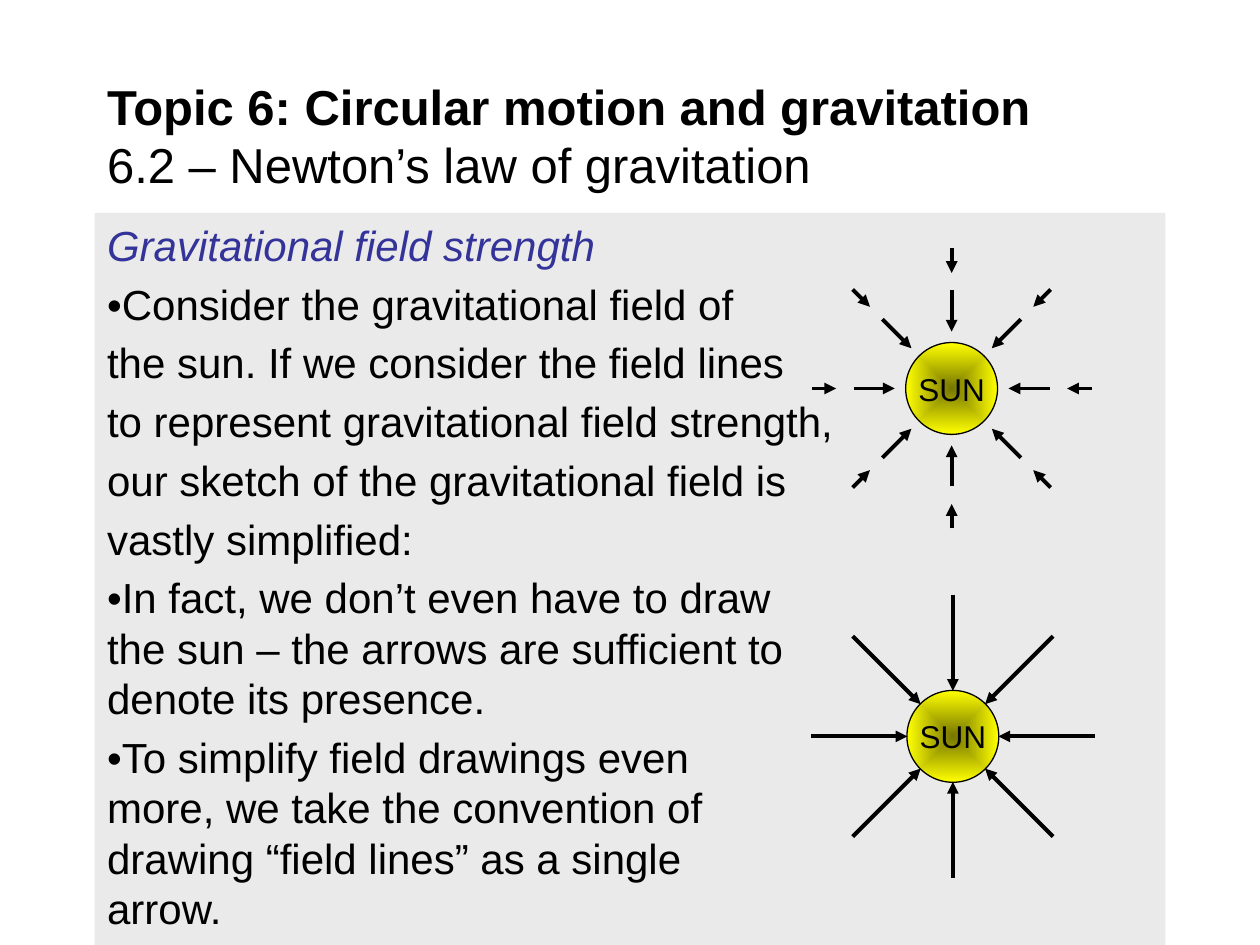
from math import cos, pi, sin

from lxml import etree
from pptx import Presentation
from pptx.dml.color import RGBColor
from pptx.enum.shapes import MSO_CONNECTOR, MSO_SHAPE
from pptx.enum.text import MSO_ANCHOR, MSO_AUTO_SIZE, PP_ALIGN
from pptx.oxml.ns import qn
from pptx.util import Pt

OVAL, STRAIGHT = MSO_SHAPE.OVAL, MSO_CONNECTOR.STRAIGHT
TOP, MIDDLE = MSO_ANCHOR.TOP, MSO_ANCHOR.MIDDLE
LEFT, CENTER = PP_ALIGN.LEFT, PP_ALIGN.CENTER
NO_FIT = MSO_AUTO_SIZE.NONE

BODY = [
    "Gravitational field strength",
    "•Consider the gravitational field of",
    "the sun. If we consider the field lines",
    "to represent gravitational field strength,",
    "our sketch of the gravitational field is",
    "vastly simplified:",
    "•In fact, we don’t even have to draw\vthe sun – the arrows are sufficient to\v"
    "denote its presence.",
    "•To simplify field drawings even\vmore, we take the convention of\v"
    "drawing “field lines” as a single\varrow.",
]
SUN_RADIUS = 26.25
# Each sun: centre x, centre y, rings of arrows as (start radius, end radius)
SUNS = [
    (543.8, 222, [(56, 32.5), (80, 66)]),
    (544.5, 420.8, [(81, 26)]),
]


def color(value):
    return RGBColor.from_string(value)


def style(font, size, value):
    font.name = "Arial"
    font.size = Pt(size)
    font.color.rgb = color(value)


deck = Presentation()
deck.slide_width, deck.slide_height = Pt(720), Pt(540)
page = deck.slides.add_slide(deck.slide_layouts[1])
title, body = page.placeholders

# Title
title.left, title.top, title.width, title.height = Pt(54), Pt(41.8), Pt(612), Pt(70.5)
frame = title.text_frame
frame.auto_size = NO_FIT
frame.vertical_anchor = MIDDLE
para = frame.paragraphs[0]
para.alignment = LEFT
style(para.font, 28, "000000")
topic = para.add_run()
topic.text = "Topic 6: Circular motion and gravitation"
topic.font.bold = True
para.add_line_break()
section = para.add_run()
section.text = "6.2 – Newton’s law of gravitation"

# Grey panel with the body text
body.left, body.top, body.width, body.height = Pt(54), Pt(121.7), Pt(612), Pt(418.3)
body.fill.solid()
body.fill.fore_color.rgb = color("EAEAEA")
frame = body.text_frame
frame.auto_size = NO_FIT
frame.vertical_anchor = TOP
for index, text in enumerate(BODY):
    para = frame.paragraphs[0] if index == 0 else frame.add_paragraph()
    para.text = text
    para.space_before = Pt(4.8)
    style(para.font, 24, "000000" if index else "333399")
    para.font.italic = index == 0
    # The bullet signs are part of the text, so the template's bullets go
    properties = para._p.get_or_add_pPr()
    properties.set("marL", "0")
    properties.set("indent", "0")
    bullet = etree.Element(qn("a:buNone"))
    properties.find(qn("a:spcBef")).addnext(bullet)

for center_x, center_y, rings in SUNS:
    # Sun with a gradient that darkens towards its middle
    sun = page.shapes.add_shape(OVAL, Pt(center_x - SUN_RADIUS), Pt(center_y - SUN_RADIUS),
                                Pt(2 * SUN_RADIUS), Pt(2 * SUN_RADIUS))
    sun.shadow.inherit = False
    sun.line.color.rgb = color("000000")
    sun.line.width = Pt(0.75)
    sun.fill.gradient()
    for stop, position, value in zip(sun.fill.gradient_stops, (0, 1), ("767600", "FFFF00")):
        stop.position = position
        stop.color.rgb = color(value)
    gradient = sun._element.spPr.find(qn("a:gradFill"))
    gradient.remove(gradient.find(qn("a:lin")))
    shading = etree.SubElement(gradient, qn("a:path"), path="shape")
    etree.SubElement(shading, qn("a:fillToRect"), l="50000", t="50000", r="50000", b="50000")

    # Label
    frame = sun.text_frame
    frame.word_wrap = False
    frame.vertical_anchor = MIDDLE
    para = frame.paragraphs[0]
    para.text = "SUN"
    para.alignment = CENTER
    style(para.font, 18, "000000")

    # Eight inward arrows in each ring
    for start, end in rings:
        for step in range(8):
            across, down = cos(step * pi / 4), sin(step * pi / 4)
            arrow = page.shapes.add_connector(
                STRAIGHT,
                Pt(center_x + start * across), Pt(center_y + start * down),
                Pt(center_x + end * across), Pt(center_y + end * down))
            arrow.line.color.rgb = color("000000")
            arrow.line.width = Pt(2.25)
            etree.SubElement(arrow.line._get_or_add_ln(), qn("a:tailEnd"), type="triangle")
            etree.SubElement(arrow._element.spPr, qn("a:effectLst"))

deck.save("out.pptx")
